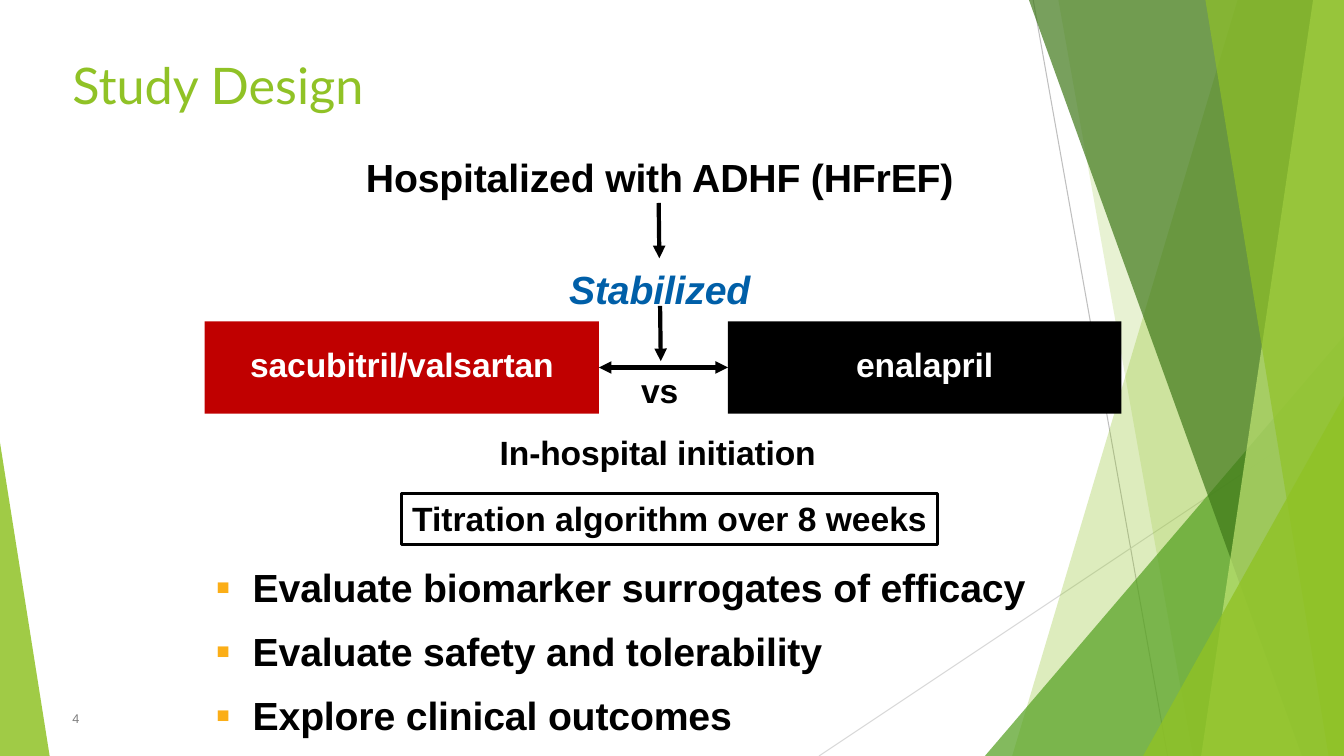
"""Build the study design slide with its green facet background."""
from dataclasses import dataclass

from lxml import etree
from pptx import Presentation
from pptx.dml.color import RGBColor
from pptx.enum import shapes, text
from pptx.oxml import ns
from pptx.util import Pt

WIDTH, HEIGHT = 960, 540
BLACK = RGBColor(0, 0, 0)
WHITE = RGBColor(255, 255, 255)
RED = RGBColor(0xC0, 0, 0)
BLUE = RGBColor(0, 0x5F, 0xA8)
GREEN = RGBColor(0x90, 0xC2, 0x26)
MID_GREEN = RGBColor(0x54, 0xA0, 0x21)
DARK_GREEN = RGBColor(0x3F, 0x78, 0x19)
PALE_GREEN = RGBColor(0xC0, 0xE4, 0x74)
ORANGE = RGBColor(0xFB, 0xAE, 0x17)
GREY = RGBColor(0x7E, 0x7E, 0x7E)
SILVER = RGBColor(0xBF, 0xBF, 0xBF)
LIGHT_GREY = RGBColor(0xD9, 0xD9, 0xD9)
LEFT, CENTER = text.PP_ALIGN.LEFT, text.PP_ALIGN.CENTER


@dataclass(frozen=True)
class Band:
    top_x: float
    bottom_x: float
    color: RGBColor
    opacity: int


@dataclass(frozen=True)
class Triangle:
    left: float
    top: float
    width: float
    apex: float
    color: RGBColor
    opacity: int


@dataclass(frozen=True)
class Line:
    start: tuple[float, float]
    end: tuple[float, float]
    color: RGBColor = BLACK
    width: float = 3


@dataclass(frozen=True)
class Words:
    content: str
    size: float = 24
    color: RGBColor = BLACK
    name: str = "Arial"
    bold: bool = True
    italic: bool = False
    spacing: int = -10
    space_before: float = 0


@dataclass(frozen=True)
class Label:
    bounds: tuple[float, float, float, float]
    lines: tuple[Words, ...]
    inset: float = 0.7
    alignment: text.PP_ALIGN = LEFT
    bulleted: bool = False


@dataclass(frozen=True)
class Box:
    label: Label
    fill: RGBColor | None = None


FACETS = (
    Band(884, 723, GREEN, 30),
    Band(756, 852, GREEN, 20),
    Triangle(703.5, 240, 256.5, 1, MID_GREEN, 72),
    Band(735, 930, DARK_GREEN, 70),
    Band(938, 858, PALE_GREEN, 70),
    Band(861, 949, GREEN, 65),
    Triangle(816.5, 283, 143.5, 1, GREEN, 80),
    Triangle(0, 316, 35.5, 0, GREEN, 85),
)
HAIRLINES = (
    Line((738, 0), (834, HEIGHT), SILVER, 0.75),
    Line((WIDTH, 290), (585, HEIGHT), LIGHT_GREY, 0.75),
)
ARROWS = (
    Line((470.5, 145), (471, 184.5)),
    Line((471.5, 218.5), (472, 258)),
)
LABELS = (
    Label((51.75, 507, 8, 13), (Words("4", 9, GREY, bold=False),)),
    Label((51.75, 38, 232.5, 45.5),
          (Words("Study Design", 36, GREEN, "Lato", False, spacing=0),)),
    Label((458, 263.5, 29, 31), (Words("vs"),)),
    Label((357, 308, 230, 31), (Words("In-hospital initiation"),)),
    Label((258.5, 109, 425.5, 113),
          (Words("Hospitalized with ADHF (HFrEF)", 28),
           Words("Stabilized", 28, BLUE, italic=True, space_before=46.5)),
          alignment=CENTER),
    Label((152.5, 393, 586, 135.5),
          (Words("Evaluate biomarker surrogates of efficacy", 28),
           Words("Evaluate safety and tolerability", 28, space_before=12),
           Words("Explore clinical outcomes", 28, space_before=12)),
          inset=9.5, bulleted=True),
)
SACUBITRIL = Box(Label((146.25, 229.5, 281.5, 66),
                       (Words("sacubitril/valsartan", color=WHITE),), 16.5, CENTER), RED)
ENALAPRIL = Box(Label((520, 229.5, 281, 66),
                      (Words("enalapril", color=WHITE),), 16.5, CENTER), BLACK)
TITRATION = Box(Label((287, 352.5, 382.5, 36.5),
                      (Words("Titration algorithm over 8 weeks", spacing=0),), 3, CENTER))


def add_child(parent, tag: str, **attributes: str):
    child = etree.SubElement(parent, ns.qn(tag))
    for name, value in attributes.items():
        child.set(name, value)
    return child


def add_facet(slide, facet: Band | Triangle) -> None:
    if isinstance(facet, Band):
        builder = slide.shapes.build_freeform(Pt(facet.top_x), 0)
        corners = ((WIDTH, 0), (WIDTH, HEIGHT), (facet.bottom_x, HEIGHT))
        builder.add_line_segments([(Pt(x), Pt(y)) for x, y in corners])
        shape = builder.convert_to_shape()
    else:
        bounds = (facet.left, facet.top, facet.width, HEIGHT - facet.top)
        shape = slide.shapes.add_shape(
            shapes.MSO_SHAPE.ISOSCELES_TRIANGLE, *map(Pt, bounds))
        shape.adjustments[0] = facet.apex
    shape.shadow.inherit = False
    shape.line.fill.background()
    shape.fill.solid()
    shape.fill.fore_color.rgb = facet.color
    color = shape._element.spPr.find(".//" + ns.qn("a:srgbClr"))
    add_child(color, "a:alpha", val=str(facet.opacity * 1000))


def add_line(slide, line: Line, heads: tuple[str, ...] = ()):
    connector = slide.shapes.add_connector(
        shapes.MSO_CONNECTOR.STRAIGHT, *map(Pt, line.start + line.end))
    connector.line.color.rgb = line.color
    connector.line.width = Pt(line.width)
    for head in heads:
        add_child(connector.line._get_or_add_ln(), head, type="triangle")
    add_child(connector._element.spPr, "a:effectLst")
    return connector


def add_bullet(paragraph) -> None:
    properties = paragraph._p.get_or_add_pPr()
    properties.set("marL", str(Pt(28)))
    properties.set("indent", str(Pt(-26.5)))
    color = add_child(properties, "a:buClr")
    add_child(color, "a:srgbClr", val=str(ORANGE))
    add_child(properties, "a:buSzPct", val="109000")
    add_child(properties, "a:buFont", typeface="Arial")
    add_child(properties, "a:buChar", char="▪")


def write_text(shape, label: Label) -> None:
    frame = shape.text_frame
    frame_format = {
        "word_wrap": True, "vertical_anchor": text.MSO_ANCHOR.TOP,
        "margin_left": 0, "margin_right": 0, "margin_bottom": 0,
        "margin_top": Pt(label.inset),
    }
    for name, value in frame_format.items():
        setattr(frame, name, value)
    for index, words in enumerate(label.lines):
        paragraph = frame.add_paragraph() if index else frame.paragraphs[0]
        if label.bulleted:
            add_bullet(paragraph)
        paragraph.alignment = label.alignment
        if words.space_before:
            paragraph.space_before = Pt(words.space_before)
        run = paragraph.add_run()
        run.text = words.content
        font_format = {"name": words.name, "size": Pt(words.size),
                       "bold": words.bold, "italic": words.italic}
        for name, value in font_format.items():
            setattr(run.font, name, value)
        run.font.color.rgb = words.color
        run._r.get_or_add_rPr().set("spc", str(words.spacing))


def add_box(slide, box: Box):
    shape = slide.shapes.add_shape(
        shapes.MSO_SHAPE.RECTANGLE, *map(Pt, box.label.bounds))
    shape.shadow.inherit = False
    if box.fill is None:
        shape.fill.background()
        shape.line.color.rgb = BLACK
        shape.line.width = Pt(2.28)
    else:
        shape.fill.solid()
        shape.fill.fore_color.rgb = box.fill
        shape.line.fill.background()
    write_text(shape, box.label)
    return shape


def main() -> None:
    presentation = Presentation()
    presentation.slide_width, presentation.slide_height = Pt(WIDTH), Pt(HEIGHT)
    slide = presentation.slides.add_slide(presentation.slide_layouts[6])
    for line in HAIRLINES:
        add_line(slide, line)
    for facet in FACETS:
        add_facet(slide, facet)
    sacubitril, enalapril, _ = [
        add_box(slide, box) for box in (SACUBITRIL, ENALAPRIL, TITRATION)]
    for label in LABELS:
        write_text(slide.shapes.add_textbox(*map(Pt, label.bounds)), label)
    for arrow in ARROWS:
        add_line(slide, arrow, ("a:tailEnd",))
    versus = add_line(slide, Line((427.75, 262.5), (520, 262.5)), ("a:headEnd", "a:tailEnd"))
    versus.begin_connect(sacubitril, 3)
    versus.end_connect(enalapril, 1)
    presentation.save("out.pptx")


if __name__ == "__main__":
    main()
